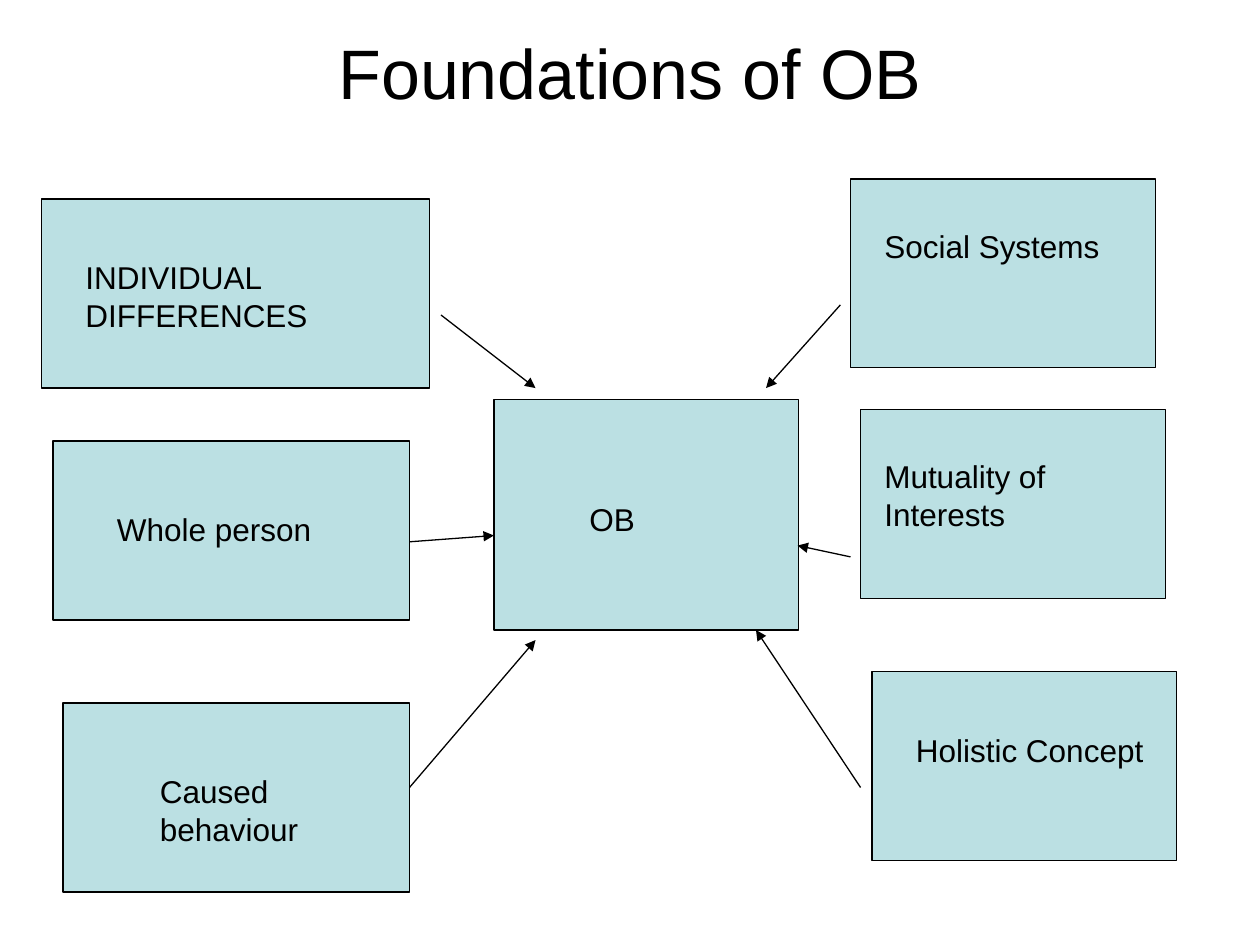
from lxml import etree
from pptx import Presentation
from pptx.dml.color import RGBColor
from pptx.enum.shapes import MSO_CONNECTOR, MSO_SHAPE
from pptx.enum.text import MSO_ANCHOR, MSO_AUTO_SIZE, PP_ALIGN
from pptx.oxml.ns import qn
from pptx.util import Inches, Pt

RECT = MSO_SHAPE.RECTANGLE
STRAIGHT = MSO_CONNECTOR.STRAIGHT
MIDDLE = MSO_ANCHOR.MIDDLE
CENTER = PP_ALIGN.CENTER
LEFT = PP_ALIGN.LEFT
GROW = MSO_AUTO_SIZE.SHAPE_TO_FIT_TEXT
BLACK = RGBColor(0x00, 0x00, 0x00)
TEAL = RGBColor(0xBB, 0xE0, 0xE3)
FONT = "Arial"
TITLE_BOX = (0.5, 0.3, 9, 0.53)

# Each card: wording, rectangle, label box
CARDS = [
    ("INDIVIDUAL DIFFERENCES", (0.33, 1.58, 3.08, 1.5), (0.58, 2, 2.5, 0.7)),
    ("Whole person", (0.42, 3.5, 2.83, 1.42), (0.83, 4, 1.83, 0.4)),
    ("Caused behaviour", (0.5, 5.58, 2.75, 1.5), (1.17, 6.08, 1.75, 0.7)),
    ("Social Systems", (6.75, 1.42, 2.42, 1.5), (6.92, 1.75, 2, 0.4)),
    ("Mutuality of Interests", (6.83, 3.25, 2.42, 1.5), (6.92, 3.58, 2.25, 0.7)),
    ("Holistic Concept", (6.92, 5.33, 2.42, 1.5), (7.17, 5.75, 2.08, 0.4)),
    ("OB", (3.92, 3.17, 2.42, 1.83), (4.58, 3.92, 1.5, 0.4)),
]

# Each arrow: start x, start y, end x, end y
ARROWS = [
    (3.5, 2.5, 4.25, 3.08),
    (3.25, 4.3, 3.92, 4.25),
    (3.25, 6.25, 4.25, 5.08),
    (6.83, 6.25, 6, 5),
    (6.75, 4.42, 6.33, 4.33),
    (6.67, 2.42, 6.08, 3.08),
]


def to_emu(box):
    return [Inches(n) for n in box]


def set_text(frame, text, size, align):
    frame.text = text
    frame.word_wrap = True
    para = frame.paragraphs[0]
    para.alignment = align
    font = para.runs[0].font
    font.name = FONT
    font.size = Pt(size)
    font.color.rgb = BLACK


def set_line(line):
    line.color.rgb = BLACK
    line.width = Pt(0.75)


def add_title(slide, box):
    title = slide.shapes.title
    title.left, title.top, title.width, title.height = to_emu(box)
    set_text(title.text_frame, "Foundations of OB", 40, CENTER)
    title.text_frame.vertical_anchor = MIDDLE


def add_card(slide, text, box, label_box):
    # Filled rectangle
    card = slide.shapes.add_shape(RECT, *to_emu(box))
    card.shadow.inherit = False
    card.fill.solid()
    card.fill.fore_color.rgb = TEAL
    set_line(card.line)

    # Label, set off from the rectangle's edges
    label = slide.shapes.add_textbox(*to_emu(label_box))
    set_text(label.text_frame, text, 18, LEFT)
    label.text_frame.auto_size = GROW


def add_arrow(slide, ends):
    arrow = slide.shapes.add_connector(STRAIGHT, *to_emu(ends))
    set_line(arrow.line)
    # Arrowhead at the end, and no shadow
    head = etree.SubElement(arrow.line._get_or_add_ln(), qn("a:tailEnd"))
    head.set("type", "triangle")
    etree.SubElement(arrow._element.spPr, qn("a:effectLst"))


def main():
    deck = Presentation()
    deck.slide_width, deck.slide_height = Inches(10), Inches(7.5)
    slide = deck.slides.add_slide(deck.slide_layouts[5])

    add_title(slide, TITLE_BOX)
    for text, box, label_box in CARDS:
        add_card(slide, text, box, label_box)
    for ends in ARROWS:
        add_arrow(slide, ends)

    deck.save("out.pptx")


if __name__ == "__main__":
    main()
